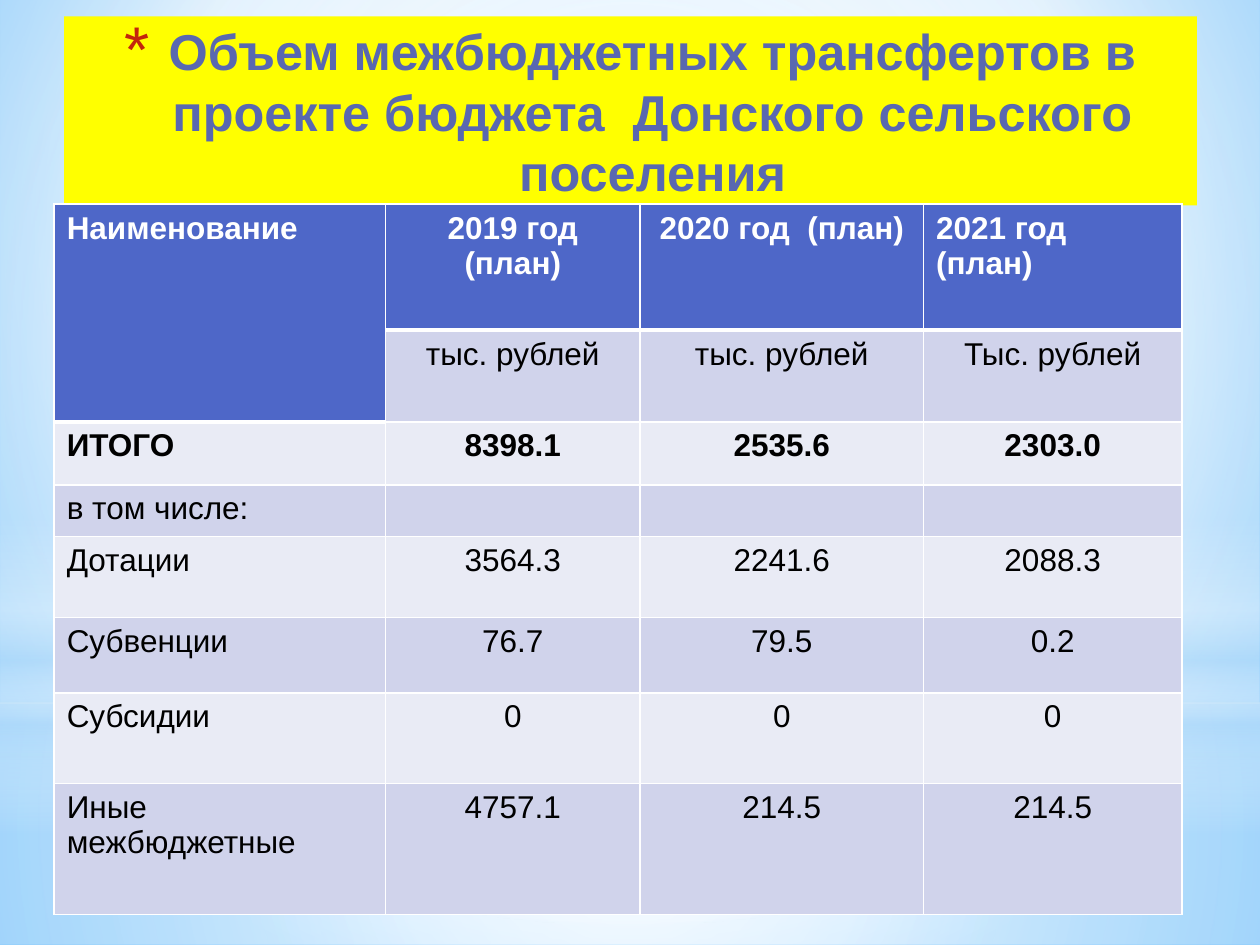
from lxml.etree import SubElement as Sub
from pptx import Presentation
from pptx.dml.color import RGBColor as RGB
from pptx.enum.shapes import MSO_SHAPE as Shape
from pptx.enum.text import MSO_ANCHOR as Anchor, PP_ALIGN as Align
from pptx.oxml.ns import qn
from pptx.util import Inches, Pt

# Content
TITLE = "Объем межбюджетных трансфертов в проекте бюджета  Донского сельского поселения"
ROWS = [
    ("Наименование", "2019 год (план)", "2020 год  (план)", "2021 год (план)"),
    ("", "тыс. рублей", "тыс. рублей", "Тыс. рублей"),
    ("ИТОГО", "8398.1", "2535.6", "2303.0"),
    ("в том числе:", "", "", ""),
    ("Дотации", "3564.3", "2241.6", "2088.3"),
    ("Субвенции", "76.7", "79.5", "0.2"),
    ("Субсидии", "0", "0", "0"),
    ("Иные межбюджетные", "4757.1", "214.5", "214.5"),
]
WIDTHS = [2.63, 2.02, 2.25, 2.05]
HEIGHTS = [1, 0.73, 0.5, 0.41, 0.64, 0.6, 0.72, 1.04]

# Theme
THEME = {
    "font": "Arial", "title_size": 28.8, "body_size": 18,
    "title": "5968B0", "band": "FFFF00", "star": "C3260C",
    "head": "4E67C8", "odd": "D0D3EB", "even": "E9EBF5",
    "white": "FFFFFF", "black": "000000", "sky": "B4DCFA",
}
WHITE, SKY = THEME["white"], THEME["sky"]
MID = (50, 50, 50, 50)

# Backdrop: stops are (position, colour, opacity), all in percent
BACK = [(0, "9ED5FF", 100), (60, WHITE, 100), (100, "5BB9FF", 100)]
PANELS = [
    (Shape.RECTANGLE, (0, 5.58, 10, 1.92), MID,
     [(0, WHITE, 91), (37, WHITE, 76), (100, SKY, 79)]),
    (Shape.RECTANGLE, (0, 0, 10, 5.58), MID,
     [(0, WHITE, 89), (48, WHITE, 62), (100, SKY, 79)]),
    (Shape.RECTANGLE, (0, 4.12, 10, 2.5), None,
     [(0, WHITE, 0), (29, WHITE, 30), (45, SKY, 40),
      (55, WHITE, 26), (65, SKY, 60), (100, WHITE, 0)]),
    (Shape.OVAL, (0, 1.75, 10, 5.58), MID,
     [(0, WHITE, 100), (56, WHITE, 0)]),
]


def node(top, tag, **attrs):
    return Sub(top, qn("a:" + tag), {k: str(v) for k, v in attrs.items()})


def shade(fill, stops, focus):
    """Gradient fill: round about focus, or top to bottom without one."""
    fill.gradient()
    grad = fill._xPr.find(qn("a:gradFill"))
    for old in list(grad):
        grad.remove(old)
    group = node(grad, "gsLst")
    for pos, color, alpha in stops:
        clr = node(node(group, "gs", pos=pos * 1000), "srgbClr", val=color)
        node(clr, "alpha", val=alpha * 1000)
    if focus:
        rect = {k: v * 1000 for k, v in zip("ltrb", focus)}
        node(node(grad, "path", path="circle"), "fillToRect", **rect)
    else:
        node(grad, "lin", ang=90 * 60000, scaled=0)


def write(frame, text, size=THEME["body_size"], color="black", bold=False,
          align=Align.LEFT):
    para = frame.paragraphs[0]
    para.alignment = align
    run = para.add_run()
    run.text = text
    font = run.font
    font.name, font.size, font.bold = THEME["font"], Pt(size), bold
    font.color.rgb = RGB.from_string(THEME[color])
    return para


def edge(cell, top, bottom):
    props = cell._tc.get_or_add_tcPr()
    for side, width in zip("LRTB", (1, 1, top, bottom)):
        line = node(props, "ln" + side, w=Pt(width))
        node(node(line, "solidFill"), "srgbClr", val=WHITE)


def paint(fill, name):
    fill.solid()
    fill.fore_color.rgb = RGB.from_string(THEME[name])


prs = Presentation()
prs.slide_width, prs.slide_height = Inches(10), Inches(7.5)
slide = prs.slides.add_slide(prs.slide_layouts[5])
shapes = slide.shapes

# Background and soft panels
shade(slide.background.fill, BACK, (20, 10, 20, 60))
for kind, box, focus, stops in PANELS:
    panel = shapes.add_shape(kind, *map(Inches, box))
    panel.shadow.inherit = False
    panel.line.fill.background()
    shade(panel.fill, stops, focus)

# Title, brought in front of the panels
title = shapes.title
shapes._spTree.append(title._element)
title.left, title.top = Inches(0.51), Inches(0.13)
title.width, title.height = Inches(8.99), Inches(1.5)
paint(title.fill, "band")
title.text_frame.word_wrap = True
title.text_frame.vertical_anchor = Anchor.MIDDLE
para = write(title.text_frame, TITLE, size=THEME["title_size"],
             color="title", bold=True, align=Align.CENTER)
props = para._p.get_or_add_pPr()
props.set("marL", str(Inches(0.35)))
props.set("indent", str(Inches(-0.35)))
node(node(props, "buClr"), "srgbClr", val=THEME["star"])
node(props, "buSzPct", val=128000)
node(props, "buFont", typeface=THEME["font"])
node(props, "buChar", char="*")

# Table
table = shapes.add_table(len(ROWS), len(WIDTHS), Inches(0.43), Inches(1.62),
                         Inches(sum(WIDTHS)), Inches(sum(HEIGHTS))).table
for col, width in zip(table.columns, WIDTHS):
    col.width = Inches(width)
for row, height in zip(table.rows, HEIGHTS):
    row.height = Inches(height)
table.cell(0, 0).merge(table.cell(1, 0))

last = len(WIDTHS) - 1
for r, row in enumerate(ROWS):
    for c, text in enumerate(row):
        cell = table.cell(r, c)
        depth = 2 if c == 0 else 1
        head = r < depth
        edge(cell, 3 if r == depth else 1, 3 if head else 1)
        paint(cell.fill, "head" if head else "odd" if r % 2 else "even")
        left = c == 0 or (r == 0 and c == last)
        if text:
            write(cell.text_frame, text, color="white" if head else "black",
                  bold=head or r == 2,
                  align=Align.LEFT if left else Align.CENTER)

prs.save("out.pptx")
